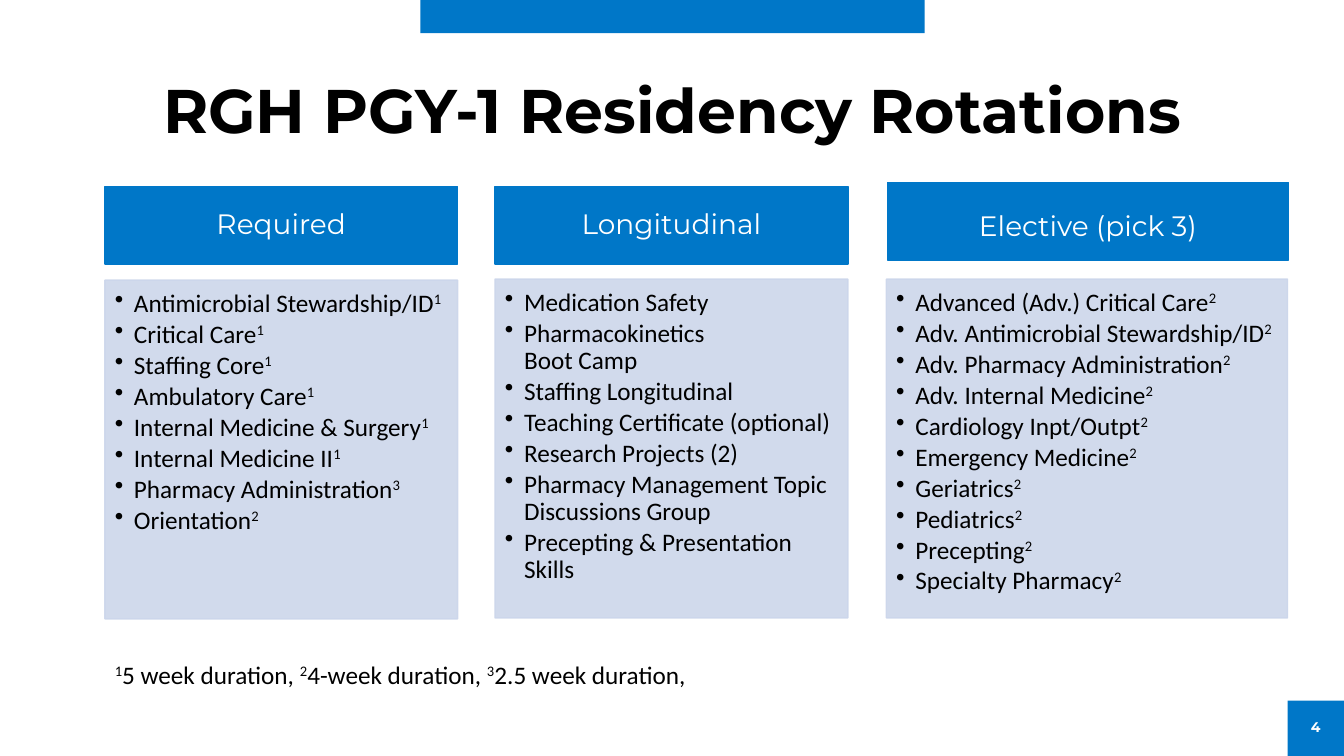
from lxml import etree
from pptx import Presentation
from pptx.dml.color import RGBColor
from pptx.enum.shapes import MSO_SHAPE
from pptx.enum.text import MSO_ANCHOR, PP_ALIGN
from pptx.oxml.ns import qn
from pptx.util import Inches, Pt

BLUE = RGBColor(0x00, 0x77, 0xC8)
PALE_BLUE = RGBColor(0xCC, 0xD6, 0xEB)
BLACK = RGBColor(0x00, 0x00, 0x00)
WHITE = RGBColor(0xFF, 0xFF, 0xFF)
HEADING_FONT = "Montserrat"
BODY_FONT = "Calibri"

TITLE = "RGH PGY-1 Residency Rotations"
PAGE_NUMBER = "4"

# Each rotation is (name, footnote mark).
REQUIRED = [
    ("Antimicrobial Stewardship/ID", "1"),
    ("Critical Care", "1"),
    ("Staffing Core", "1"),
    ("Ambulatory Care", "1"),
    ("Internal Medicine & Surgery", "1"),
    ("Internal Medicine II", "1"),
    ("Pharmacy Administration", "3"),
    ("Orientation", "2"),
]
LONGITUDINAL = [
    ("Medication Safety", ""),
    ("Pharmacokinetics \vBoot Camp", ""),
    ("Staffing Longitudinal", ""),
    ("Teaching Certificate (optional)", ""),
    ("Research Projects (2)", ""),
    ("Pharmacy Management Topic Discussions Group", ""),
    ("Precepting & Presentation Skills", ""),
]
ELECTIVE = [
    ("Advanced (Adv.) Critical Care", "2"),
    ("Adv. Antimicrobial Stewardship/ID", "2"),
    ("Adv. Pharmacy Administration", "2"),
    ("Adv. Internal Medicine", "2"),
    ("Cardiology Inpt/Outpt", "2"),
    ("Emergency Medicine", "2"),
    ("Geriatrics", "2"),
    ("Pediatrics", "2"),
    ("Precepting", "2"),
    ("Specialty Pharmacy", "2"),
]
FOOTNOTES = [
    ("1", "5 week duration, "),
    ("2", "4-week duration, "),
    ("3", "2.5 week duration,"),
]

# heading, rotations, width, (header left, top), (list left, top), header text drop
COLUMNS = [
    ("Required", REQUIRED, 3.5, (1.04, 1.85), (1.04, 2.78), 0),
    ("Longitudinal", LONGITUDINAL, 3.5, (4.91, 1.85), (4.91, 2.77), 0),
    ("Elective (pick 3)", ELECTIVE, 3.98, (8.8, 1.81), (8.79, 2.77), 0.06),
]
HEADER_HEIGHT = 0.77
LIST_HEIGHT = 3.36
BULLET_INDENT = 0.19


def add_rectangle(slide, left, top, width, height, color, outlined=False):
    shape = slide.shapes.add_shape(
        MSO_SHAPE.RECTANGLE, Inches(left), Inches(top), Inches(width), Inches(height))
    shape.shadow.inherit = False
    shape.fill.solid()
    shape.fill.fore_color.rgb = color
    if outlined:
        shape.line.color.rgb = color
        shape.line.width = Pt(1)
    else:
        shape.line.fill.background()
    return shape


def add_text_box(slide, left, top, width, height, wrap=True):
    box = slide.shapes.add_textbox(Inches(left), Inches(top), Inches(width), Inches(height))
    box.text_frame.word_wrap = wrap
    return box


def set_margins(text_frame, left, top, right, bottom):
    text_frame.margin_left, text_frame.margin_top = Inches(left), Inches(top)
    text_frame.margin_right, text_frame.margin_bottom = Inches(right), Inches(bottom)


def format_runs(paragraph, name, size, color, bold=False):
    for run in paragraph.runs:
        run.font.name = name
        run.font.size = Pt(size)
        run.font.color.rgb = color
        run.font.bold = bold


def set_heading(shape, text, size, color, bold=False):
    """Write one centred line in the heading font."""
    text_frame = shape.text_frame
    text_frame.vertical_anchor = MSO_ANCHOR.MIDDLE
    paragraph = text_frame.paragraphs[0]
    paragraph.text = text
    paragraph.alignment = PP_ALIGN.CENTER
    paragraph.line_spacing = 0.9
    format_runs(paragraph, HEADING_FONT, size, color, bold)
    return paragraph


def add_superscript(paragraph, mark):
    run = paragraph.add_run()
    run.text = mark
    run._r.get_or_add_rPr().set("baseline", "30000")


def add_bullet(paragraph):
    properties = paragraph._p.get_or_add_pPr()
    properties.set("marL", str(Inches(BULLET_INDENT)))
    properties.set("indent", str(-Inches(BULLET_INDENT)))
    etree.SubElement(properties, qn("a:buChar")).set("char", "•")


def set_transparent(shape, opacity):
    """Apply an opacity in percent to the fill and the outline."""
    for color in shape._element.spPr.iter(qn("a:srgbClr")):
        etree.SubElement(color, qn("a:alpha")).set("val", str(opacity * 1000))


def add_header(slide, heading, left, top, width, drop):
    header = add_rectangle(slide, left, top, width, HEADER_HEIGHT, BLUE, outlined=True)
    set_margins(header.text_frame, 0.16, 0.09 + 2 * drop, 0.16, 0.09)
    set_heading(header, heading, 20, WHITE).space_after = Pt(7)


def add_rotation_list(slide, rotations, left, top, width):
    panel = add_rectangle(slide, left, top, width, LIST_HEIGHT, PALE_BLUE, outlined=True)
    set_transparent(panel, 90)
    text_frame = panel.text_frame
    text_frame.vertical_anchor = MSO_ANCHOR.TOP
    set_margins(text_frame, 0.1, 0.1, 0.14, 0.16)
    for index, (name, mark) in enumerate(rotations):
        paragraph = text_frame.add_paragraph() if index else text_frame.paragraphs[0]
        paragraph.text = name
        if mark:
            add_superscript(paragraph, mark)
        add_bullet(paragraph)
        paragraph.alignment = PP_ALIGN.LEFT
        paragraph.line_spacing = 0.9
        paragraph.space_after = Pt(2.7)
        format_runs(paragraph, BODY_FONT, 18, BLACK)


def add_footnotes(slide):
    box = add_text_box(slide, 1.04, 6.49, 6.07, 0.4, wrap=False)
    paragraph = box.text_frame.paragraphs[0]
    for mark, duration in FOOTNOTES:
        add_superscript(paragraph, mark)
        paragraph.add_run().text = duration
    format_runs(paragraph, BODY_FONT, 18, BLACK)


def main():
    presentation = Presentation()
    presentation.slide_width = Inches(13.33)
    presentation.slide_height = Inches(7.5)
    slide = presentation.slides.add_slide(presentation.slide_layouts[6])

    add_rectangle(slide, 4.17, 0, 5, 0.33, BLUE)
    set_heading(add_text_box(slide, 0.92, 0.4, 11.5, 1.45), TITLE, 44, BLACK, bold=True)
    page_tab = add_rectangle(slide, 12.77, 6.95, 0.56, 0.55, BLUE)
    set_heading(page_tab, PAGE_NUMBER, 10, WHITE, bold=True)

    for heading, rotations, width, header_at, list_at, drop in COLUMNS:
        add_header(slide, heading, *header_at, width, drop)
        add_rotation_list(slide, rotations, *list_at, width)
    add_footnotes(slide)

    presentation.save("out.pptx")


if __name__ == "__main__":
    main()
